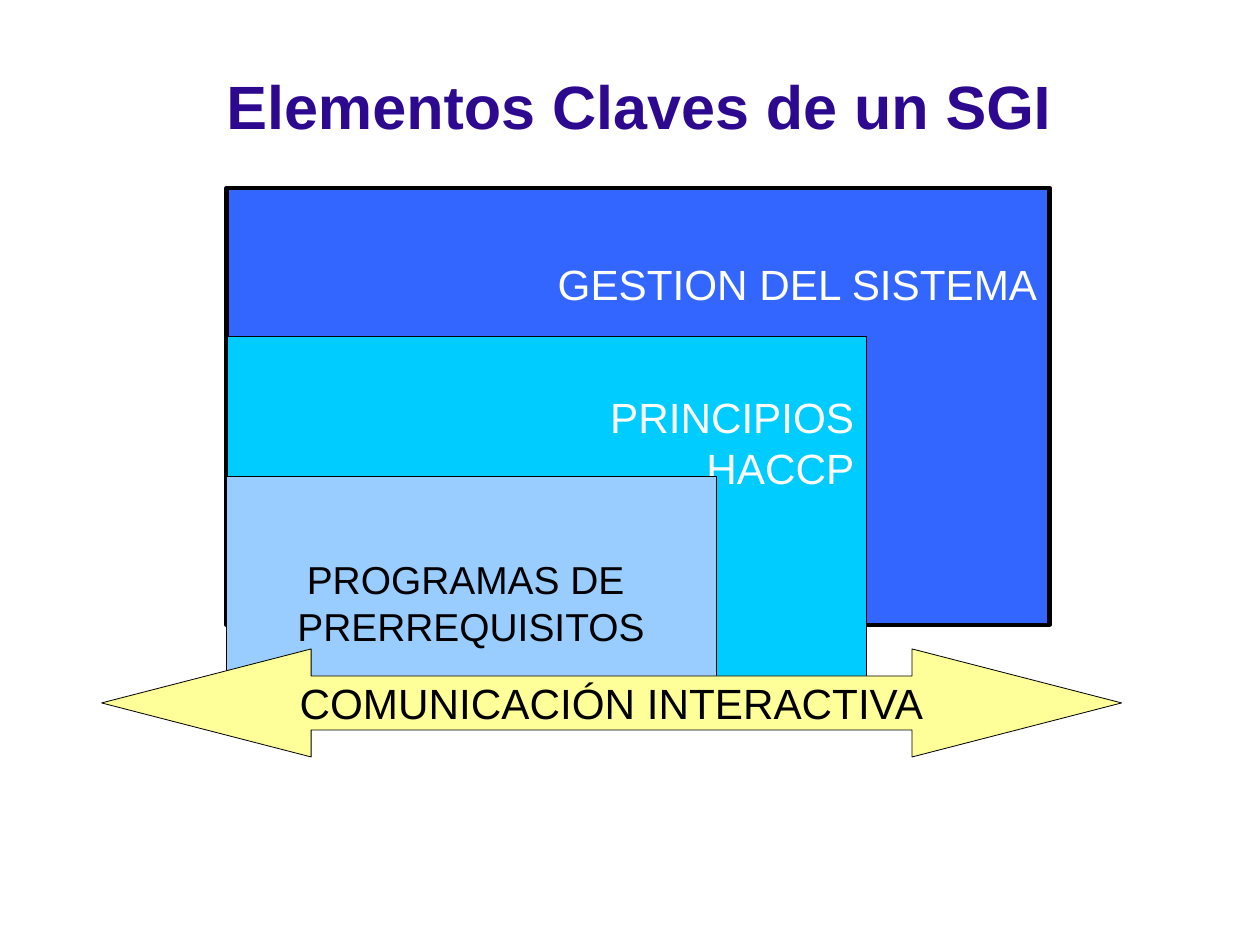
import pptx
import pptx.util
import pptx.dml.color
import pptx.enum.shapes
import pptx.enum.text

Inches, Pt = pptx.util.Inches, pptx.util.Pt
SHAPE = pptx.enum.shapes.MSO_SHAPE
ANCHOR = pptx.enum.text.MSO_ANCHOR
ALIGN = pptx.enum.text.PP_ALIGN

THEME = {
    "font": "Arial",
    "white": "FFFFFF", "black": "000000", "title": "2C098F",
    "system": "3366FF", "haccp": "00CCFF", "programs": "99CCFF", "arrow": "FFFF99",
    "title_size": 55, "label_size": 38, "programs_size": 35,
}

# Content: nested layers from back to front, then the arrow and the title
LAYERS = [
    dict(lines=["GESTION DEL SISTEMA"], box=(2.83, 2.35, 10.29, 5.46), fill="system",
         border=4, color="white", align=ALIGN.RIGHT, anchor=ANCHOR.TOP, top=0.88),
    dict(lines=["PRINCIPIOS", "HACCP"], box=(2.84, 4.2, 7.99, 4.46), fill="haccp",
         color="white", align=ALIGN.RIGHT, anchor=ANCHOR.TOP, top=0.69),
    dict(lines=["PROGRAMAS DE ", "PRERREQUISITOS"], box=(2.83, 5.95, 6.12, 3.16),
         fill="programs", size="programs_size"),
]
COMMUNICATION = dict(lines=["COMUNICACIÓN INTERACTIVA"], box=(1.27, 8.11, 12.75, 1.35),
                     fill="arrow", kind=SHAPE.LEFT_RIGHT_ARROW)
TITLE = dict(lines=["Elementos Claves de un SGI"], box=(2.83, 1.01, 10.89, 0.82),
             fill="white", border=0, color="title", size="title_size", bold=True,
             align=ALIGN.JUSTIFY, anchor=ANCHOR.TOP, left=0, right=0.14, spacing=49.4)


def rgb(key):
    return pptx.dml.color.RGBColor.from_string(THEME[key])


def write(frame, lines, *, color="black", size="label_size", bold=False,
          align=ALIGN.CENTER, anchor=ANCHOR.MIDDLE, left=0.15, right=0.15,
          top=0.07, spacing=None):
    frame.word_wrap = True
    frame.vertical_anchor = anchor
    frame.margin_left, frame.margin_right = Inches(left), Inches(right)
    frame.margin_top, frame.margin_bottom = Inches(top), Inches(0.07)
    for index, line in enumerate(lines):
        paragraph = frame.add_paragraph() if index else frame.paragraphs[0]
        paragraph.alignment = align
        if spacing:
            paragraph.line_spacing = Pt(spacing)
        run = paragraph.add_run()
        run.text = line
        run.font.name = THEME["font"]
        run.font.size = Pt(THEME[size])
        run.font.bold = bold
        run.font.color.rgb = rgb(color)


def add_block(slide, lines, box, fill, border=0.75, kind=SHAPE.RECTANGLE, **text_format):
    block = slide.shapes.add_shape(kind, *map(Inches, box))
    block.shadow.inherit = False
    block.fill.solid()
    block.fill.fore_color.rgb = rgb(fill)
    if border:
        block.line.color.rgb = rgb("black")
        block.line.width = Pt(border)
    else:
        block.line.fill.background()
    write(block.text_frame, lines, **text_format)
    return block


def main():
    deck = pptx.Presentation()
    deck.slide_width, deck.slide_height = Inches(15.75), Inches(11.81)
    slide = deck.slides.add_slide(deck.slide_layouts[6])

    # Nested layers
    for layer in LAYERS:
        add_block(slide, **layer)

    # Communication arrow with long heads
    communication = add_block(slide, **COMMUNICATION)
    communication.adjustments[0] = 0.5
    communication.adjustments[1] = 1.94

    # Title
    add_block(slide, **TITLE)
    deck.save("out.pptx")


if __name__ == "__main__":
    main()
